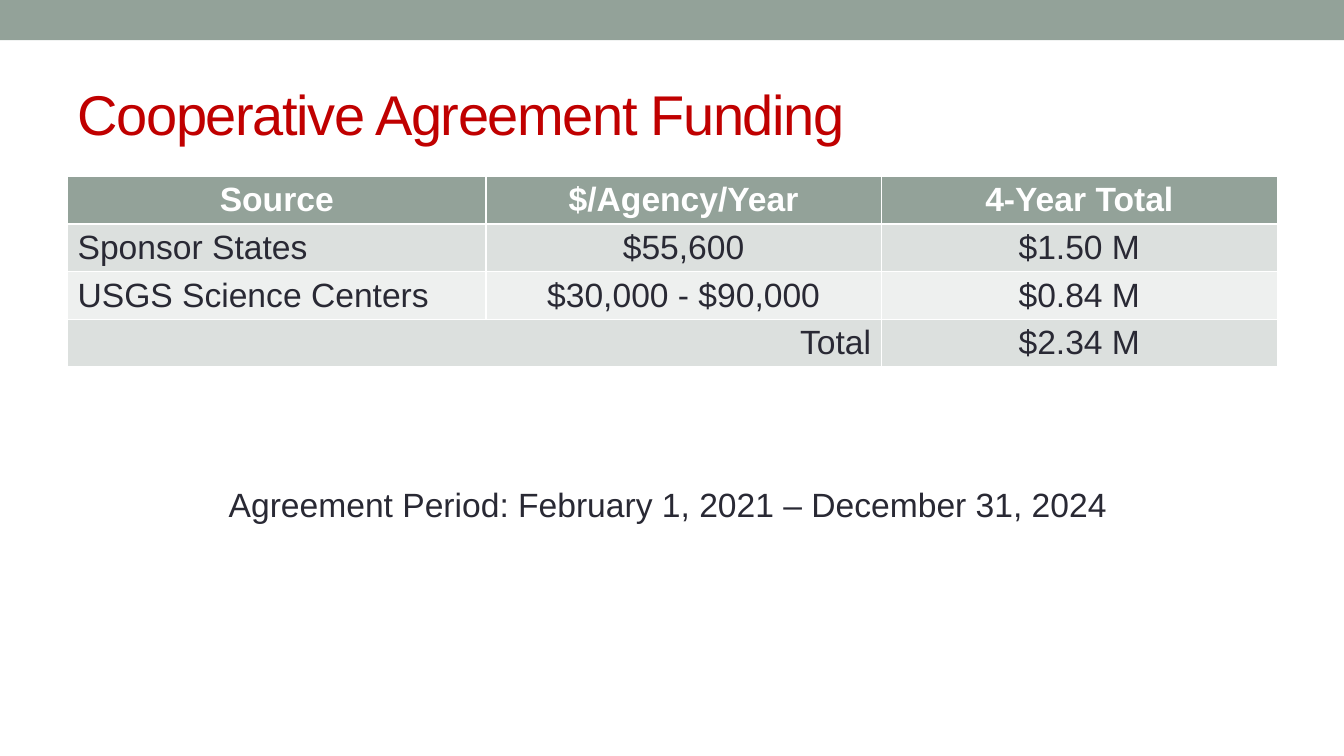
from dataclasses import dataclass

from pptx import Presentation
from pptx.dml.color import RGBColor as RGB
from pptx.enum.shapes import MSO_SHAPE as SHAPE
from pptx.enum.text import MSO_ANCHOR as ANCHOR, PP_ALIGN as ALIGN
from pptx.util import Inches, Pt


@dataclass(frozen=True)
class Theme:
    """Colours, font and type sizes of the deck."""
    font: str = "Arial"
    title_size: int = 40
    body_size: int = 24
    accent: str = "93A299"
    title: str = "C00000"
    text: str = "292934"
    white: str = "FFFFFF"
    bands: tuple = ("DCE0DE", "EEF0EF")


THEME = Theme()
FUNDING = [
    ("Source", "$/Agency/Year", "4-Year Total"),
    ("Sponsor States", "$55,600", "$1.50 M"),
    ("USGS Science Centers", "$30,000 - $90,000", "$0.84 M"),
    ("Total", "", "$2.34 M"),
]


def write(tf, text, size, color, align=ALIGN.LEFT, bold=False):
    """Put one formatted paragraph in a text frame and return it."""
    p = tf.paragraphs[0]
    p.text = text
    p.alignment = align
    p.font.name = THEME.font
    p.font.size = Pt(size)
    p.font.bold = bold
    p.font.color.rgb = RGB.from_string(color)
    return p


def add_band(slide, x, y, w, h):
    """Draw the plain band across the top."""
    sp = slide.shapes.add_shape(SHAPE.RECTANGLE, Inches(x), Inches(y), Inches(w), Inches(h))
    sp.shadow.inherit = False
    sp.fill.solid()
    sp.fill.fore_color.rgb = RGB.from_string(THEME.accent)
    sp.line.fill.background()


def add_title(slide, text, x, y, w, h):
    """Place the title with slightly tightened letters."""
    sp = slide.shapes.title
    sp.left, sp.top, sp.width, sp.height = map(Inches, (x, y, w, h))
    tf = sp.text_frame
    tf.vertical_anchor = ANCHOR.MIDDLE
    p = write(tf, text, THEME.title_size, THEME.title)
    p.runs[0]._r.get_or_add_rPr().set("spc", "-100")


def add_funding_table(slide, rows, x, y, w, h):
    """Add the banded table, with its last label spanning two columns."""
    table = slide.shapes.add_table(
        len(rows), len(rows[0]), Inches(x), Inches(y), Inches(w), Inches(h)).table
    for column, width in zip(table.columns, (4.15, 3.92, w - 4.15 - 3.92)):
        column.width = Inches(width)
    last = len(rows) - 1
    table.cell(last, 0).merge(table.cell(last, 1))
    for i, row in enumerate(rows):
        header = i == 0
        fill = THEME.accent if header else THEME.bands[(i - 1) % 2]
        color = THEME.white if header else THEME.text
        for j, text in enumerate(row):
            cell = table.cell(i, j)
            cell.fill.solid()
            cell.fill.fore_color.rgb = RGB.from_string(fill)
            if cell.is_spanned:
                continue
            align = ALIGN.CENTER
            if j == 0 and not header:
                align = ALIGN.RIGHT if i == last else ALIGN.LEFT
            write(cell.text_frame, text, THEME.body_size, color, align, header)


def add_period(slide, text, x, y, w, h):
    """Add the line that states the agreement period."""
    tf = slide.shapes.add_textbox(Inches(x), Inches(y), Inches(w), Inches(h)).text_frame
    tf.word_wrap = True
    write(tf, text, THEME.body_size, THEME.text)


def main():
    """Build the funding slide and save it."""
    prs = Presentation()
    prs.slide_width, prs.slide_height = Inches(13.33), Inches(7.5)
    slide = prs.slides.add_slide(prs.slide_layouts[5])
    add_band(slide, 0, 0, 13.33, 0.4)
    add_title(slide, "Cooperative Agreement Funding", 0.67, 0.58, 12, 1.08)
    add_funding_table(slide, FUNDING, 0.67, 1.75, 12, 1.88)
    add_period(slide, "Agreement Period: February 1, 2021 – December 31, 2024",
               2.17, 4.75, 9, 0.5)
    prs.save("out.pptx")


if __name__ == "__main__":
    main()
